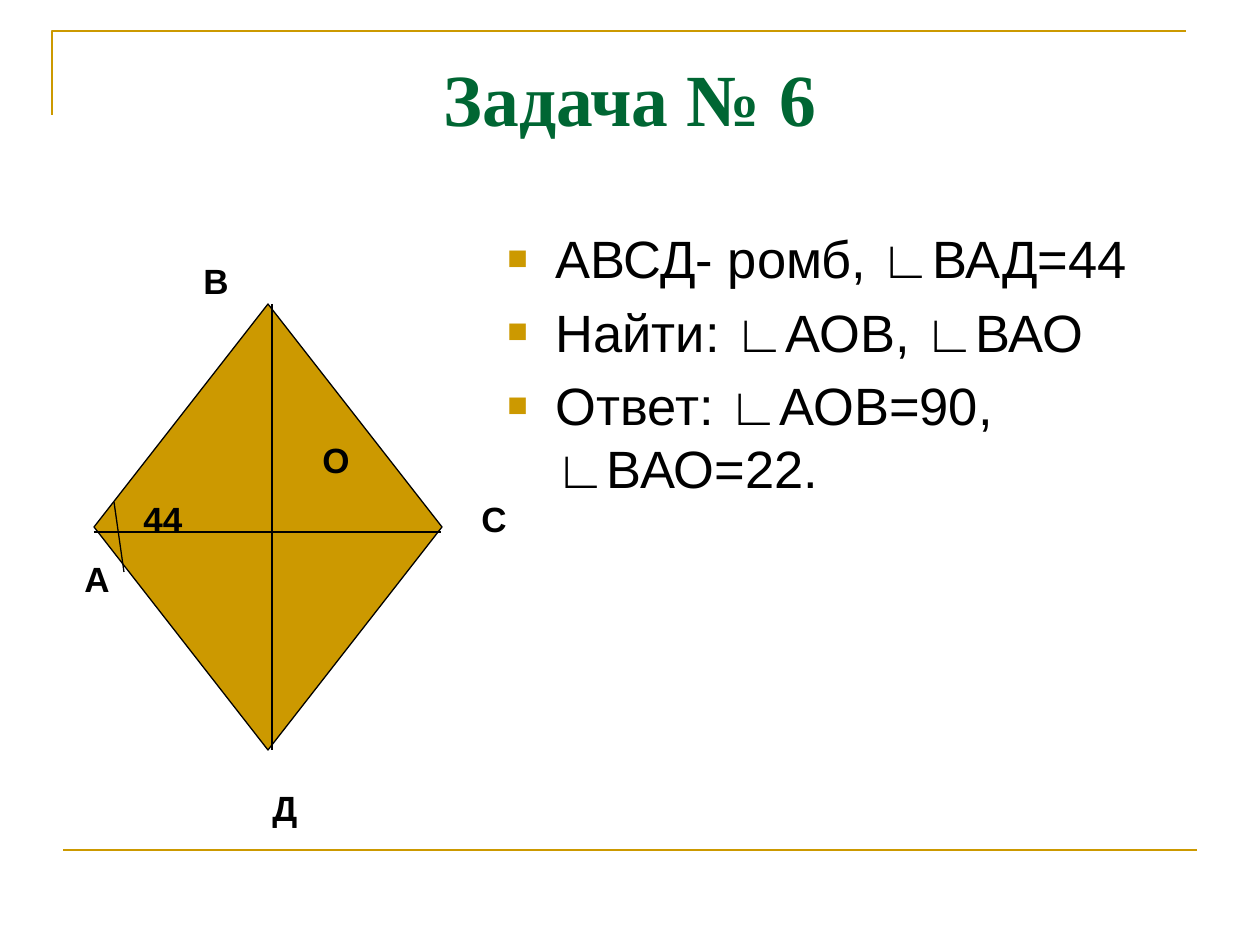
from dataclasses import dataclass

from lxml.etree import SubElement
from pptx import Presentation
from pptx.dml.color import RGBColor as Rgb
from pptx.enum.shapes import MSO_CONNECTOR as Conn, MSO_SHAPE as Shape
from pptx.enum.text import MSO_AUTO_SIZE as Auto, PP_ALIGN as Align
from pptx.oxml.ns import qn
from pptx.util import Emu, Pt


@dataclass(frozen=True)
class Theme:
    gold: str = "CC9900"
    green: str = "006633"
    black: str = "000000"
    sans: str = "Arial"
    serif: str = "Times New Roman"
    head: int = 42
    body: int = 30
    mark: int = 20
    thin: float = 0.75
    rule: float = 1.5


@dataclass(frozen=True)
class Line:
    x1: int
    y1: int
    x2: int
    y2: int
    color: str
    width: float


@dataclass(frozen=True)
class Label:
    text: str
    x: int
    y: int
    w: int = 50


T = Theme()
WIDE, HIGH = 1260, 945


def px(n: int) -> Emu:
    return Emu(round(n * 914400 / 126))


def stroke(line, color: str, width: float) -> None:
    line.color.rgb = Rgb.from_string(color)
    line.width = Pt(width)


def draw_line(slide, item: Line) -> None:
    ends = map(px, (item.x1, item.y1, item.x2, item.y2))
    link = slide.shapes.add_connector(Conn.STRAIGHT, *ends)
    stroke(link.line, item.color, item.width)
    SubElement(link._element.spPr, qn("a:effectLst"))


def add_bullet(para, indent: int) -> None:
    props = para._p.get_or_add_pPr()
    props.set("marL", str(px(indent)))
    props.set("indent", str(-px(indent)))
    color = SubElement(props, qn("a:buClr"))
    SubElement(color, qn("a:srgbClr"), val=T.gold)
    SubElement(props, qn("a:buSzPct"), val="65000")
    SubElement(props, qn("a:buFont"), typeface=T.sans)
    SubElement(props, qn("a:buChar"), char="■")


def add_text(slide, text: str, x: int, y: int, w: int, h: int, *,
             size: int, font: str = T.sans, color: str = T.black,
             bold: bool = False, align=Align.LEFT, wrap: bool = True,
             top: int = 6, before: int = 0, indent: int = 0) -> None:
    box = slide.shapes.add_textbox(px(x), px(y), px(w), px(h))
    frame = box.text_frame
    frame.word_wrap = wrap
    frame.auto_size = Auto.NONE if wrap else Auto.SHAPE_TO_FIT_TEXT
    frame.margin_top = px(top)
    frame.text = text
    for para in frame.paragraphs:
        para.alignment = align
        para.space_before = Pt(before)
        if indent:
            add_bullet(para, indent)
        for run in para.runs:
            run.font.name = font
            run.font.size = Pt(size)
            run.font.bold = bold
            run.font.color.rgb = Rgb.from_string(color)


def draw_frame(slide) -> None:
    pen = slide.shapes.build_freeform(52, 115, scale=914400 / 126)
    pen.add_line_segments([(52, 31), (1186, 31)], close=False)
    edge = pen.convert_to_shape()
    edge.shadow.inherit = False
    edge.fill.background()
    stroke(edge.line, T.gold, T.rule)
    draw_line(slide, Line(63, 850, 1197, 850, T.gold, T.rule))


def draw_rhomb(slide) -> None:
    rhomb = slide.shapes.add_shape(Shape.DIAMOND, *map(px, (94, 304, 348, 446)))
    rhomb.shadow.inherit = False
    rhomb.fill.solid()
    rhomb.fill.fore_color.rgb = Rgb.from_string(T.gold)
    stroke(rhomb.line, T.black, T.thin)

    # Diagonals and the angle mark at A
    for ends in ((94, 532, 441, 532), (272, 304, 272, 750), (114, 502, 124, 572)):
        draw_line(slide, Line(*ends, T.black, T.thin))

    # Vertices, centre and angle
    labels = (
        Label("А", 72, 551), Label("В", 191, 253), Label("С", 469, 491),
        Label("Д", 260, 780), Label("О", 310, 432, 53), Label("44", 131, 491, 64),
    )
    for tag in labels:
        add_text(slide, tag.text, tag.x, tag.y, tag.w, 54,
                 size=T.mark, bold=True, wrap=False)


def main() -> None:
    deck = Presentation()
    deck.slide_width, deck.slide_height = px(WIDE), px(HIGH)
    slide = deck.slides.add_slide(deck.slide_layouts[6])

    draw_frame(slide)

    # Title and task
    add_text(slide, "Задача № 6", 63, 38, 1134, 157, size=T.head, top=15,
             font=T.serif, color=T.green, bold=True, align=Align.CENTER)
    task = ("АВСД- ромб, ∟ВАД=44", "Найти: ∟АОВ, ∟ВАО", "Ответ: ∟АОВ=90, ∟ВАО=22.")
    add_text(slide, "\n".join(task), 495, 220, 702, 488,
             size=T.body, before=6, indent=48)

    draw_rhomb(slide)
    deck.save("out.pptx")


if __name__ == "__main__":
    main()
